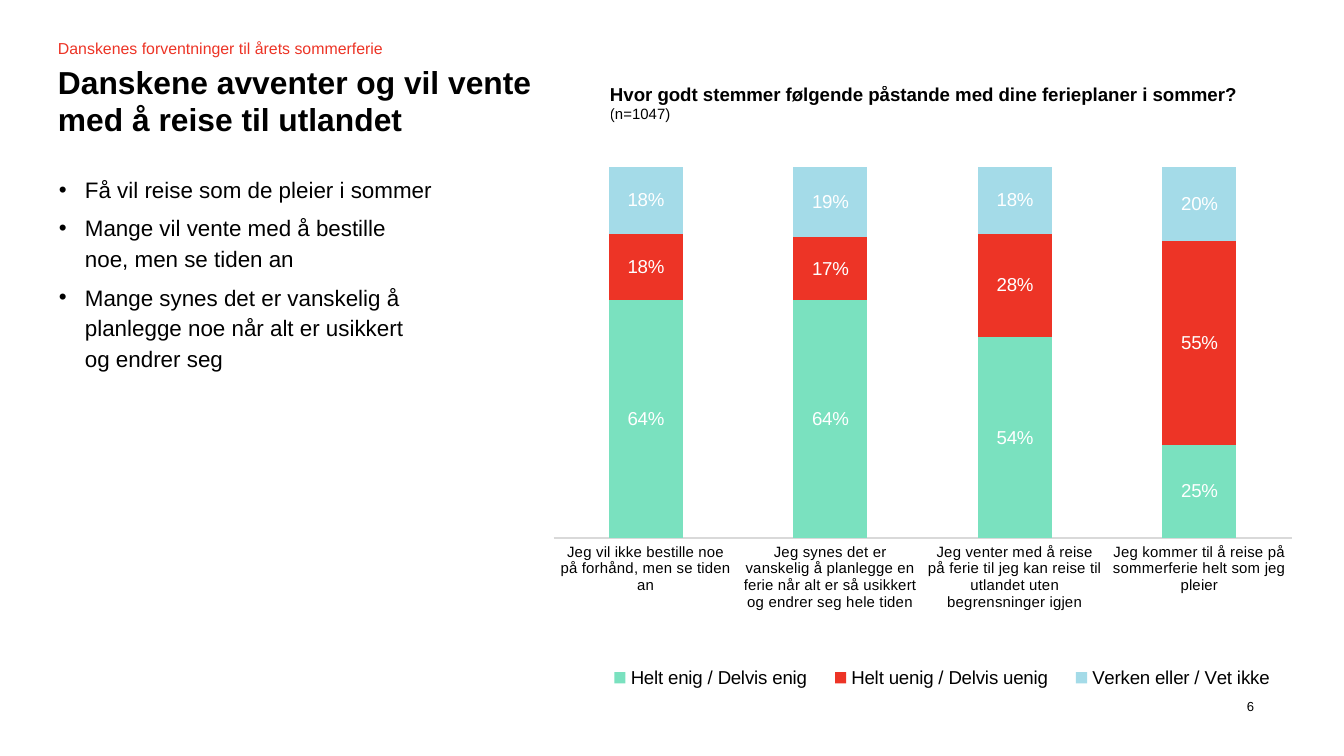
from dataclasses import dataclass
from typing import Any

from lxml import etree
from pptx import Presentation
from pptx import util as u
from pptx.chart import data as chart_data
from pptx.dml.color import RGBColor
from pptx.enum import chart as chart_enum
from pptx.oxml.ns import qn

SCALE = 914400 / 134.4
FONT = "Arial"
BLACK, WHITE, RED = "000000", "FFFFFF", "ED3426"
GREEN, BLUE, GREY = "7AE1BF", "A4DBE8", "D9D9D9"
PERCENT = "###0%"


@dataclass
class TextBlock:
    box: tuple[int, int, int, int]
    lines: list[str]
    size: float
    color: str = BLACK
    bold: bool = False
    wrap: bool = True
    bullet: bool = False
    spacing: float = 1.0
    gap: float = 0


@dataclass
class Answer:
    name: str
    values: list[float]
    color: str


TEXTS = [
    TextBlock((1247, 699, 38, 16), ["6"], 7),
    TextBlock((58, 39, 327, 19), ["Danskenes forventninger til årets sommerferie"],
              8.5, RED, wrap=False),
    TextBlock((58, 66, 508, 73),
              ["Danskene avventer og vil vente med å reise til utlandet"],
              17, bold=True, spacing=0.95),
    TextBlock((59, 172, 374, 191),
              ["Få vil reise som de pleier i sommer",
               "Mange vil vente med å bestille noe, men se tiden an",
               "Mange synes det er vanskelig å planlegge noe når alt er usikkert "
               "og endrer seg"],
              12, bullet=True, spacing=1.15, gap=2),
]
QUESTION = [
    ("Hvor godt stemmer følgende påstande med dine ferieplaner i sommer?", 10, True),
    ("(n=1047)", 8, False),
]
STATEMENTS = [
    "Jeg vil ikke bestille noe på forhånd, men se tiden an",
    "Jeg synes det er vanskelig å planlegge en ferie når alt er så usikkert "
    "og endrer seg hele tiden",
    "Jeg venter med å reise på ferie til jeg kan reise til utlandet uten "
    "begrensninger igjen",
    "Jeg kommer til å reise på sommerferie helt som jeg pleier",
]
ANSWERS = [
    Answer("Helt enig / Delvis enig", [0.64, 0.64, 0.54, 0.25], GREEN),
    Answer("Helt uenig / Delvis uenig", [0.18, 0.17, 0.28, 0.55], RED),
    Answer("Verken eller / Vet ikke", [0.18, 0.19, 0.18, 0.2], BLUE),
]


def px(value: int) -> int:
    return round(value * SCALE)


def rgb(color: str) -> RGBColor:
    return RGBColor.from_string(color)


def apply(target: Any, values: dict[str, Any]) -> None:
    for name, value in values.items():
        setattr(target, name, value)


def style(font: Any, size: float, color: str = BLACK, bold: bool = False) -> None:
    apply(font, {"name": FONT, "size": u.Pt(size), "bold": bold})
    font.color.rgb = rgb(color)


def add_bullet(paragraph: Any, indent: int) -> None:
    properties = paragraph._p.get_or_add_pPr()
    properties.set("marL", str(px(indent)))
    properties.set("indent", str(-px(indent)))
    etree.SubElement(properties, qn("a:buFont"), typeface=FONT)
    etree.SubElement(properties, qn("a:buChar"), char="•")


def add_text(slide: Any, block: TextBlock) -> None:
    frame = slide.shapes.add_textbox(*map(px, block.box)).text_frame
    apply(frame, {"margin_left": 0, "margin_right": 0, "margin_top": 0,
                  "margin_bottom": 0, "word_wrap": block.wrap})
    for index, line in enumerate(block.lines):
        paragraph = frame.add_paragraph() if index else frame.paragraphs[0]
        if block.bullet:
            add_bullet(paragraph, 26)
        apply(paragraph, {"line_spacing": block.spacing,
                          "space_before": u.Pt(block.gap if index else 0),
                          "space_after": u.Pt(block.gap)})
        run = paragraph.add_run()
        run.text = line
        style(run.font, block.size, block.color, block.bold)


def add_question(slide: Any) -> None:
    table = slide.shapes.add_table(1, 1, px(610), px(85), px(656), px(51)).table
    apply(table, {"first_row": False, "horz_banding": False})
    cell = table.cell(0, 0)
    apply(cell, {"margin_left": 0, "margin_right": 0, "margin_top": 0,
                 "margin_bottom": px(11)})
    properties = cell._tc.get_or_add_tcPr()
    for side in ("lnL", "lnR", "lnT", "lnB"):
        line = etree.SubElement(properties, qn(f"a:{side}"), w=str(u.Pt(1)))
        fill = etree.SubElement(line, qn("a:solidFill"))
        etree.SubElement(fill, qn("a:srgbClr"), val=WHITE)
    cell.fill.background()
    frame = cell.text_frame
    for index, (line, size, bold) in enumerate(QUESTION):
        paragraph = frame.add_paragraph() if index else frame.paragraphs[0]
        run = paragraph.add_run()
        run.text = line
        style(run.font, size, bold=bold)


def set_layout(parent: Any, inner: bool, place: dict[str, float]) -> None:
    layout = parent.find(qn("c:layout"))
    if layout is None:
        layout = etree.Element(qn("c:layout"))
        before = parent.find(qn("c:legendPos"))
        parent.insert(0 if before is None else parent.index(before) + 1, layout)
    manual = etree.SubElement(layout, qn("c:manualLayout"))
    if inner:
        etree.SubElement(manual, qn("c:layoutTarget"), val="inner")
    for name in ("xMode", "yMode"):
        etree.SubElement(manual, qn(f"c:{name}"), val="edge")
    for name, value in place.items():
        etree.SubElement(manual, qn(f"c:{name}"), val=str(value))


def add_answers(slide: Any) -> None:
    data = chart_data.CategoryChartData(number_format=PERCENT)
    data.categories = STATEMENTS
    for answer in ANSWERS:
        data.add_series(answer.name, answer.values)
    chart = slide.shapes.add_chart(
        chart_enum.XL_CHART_TYPE.COLUMN_STACKED_100,
        px(538), px(144), px(777), px(571), data).chart
    style(chart.font, 10)
    apply(chart, {"has_title": False, "has_legend": True})
    apply(chart.legend, {"position": chart_enum.XL_LEGEND_POSITION.BOTTOM,
                         "include_in_layout": False})
    style(chart.legend.font, 10)
    apply(chart.value_axis, {"visible": False, "has_major_gridlines": False,
                             "major_unit": 0.2})
    axis = chart.category_axis
    axis.major_tick_mark = chart_enum.XL_TICK_MARK.NONE
    style(axis.tick_labels.font, 8)
    axis.format.line.color.rgb = rgb(GREY)
    axis.format.line.width = u.Pt(0.75)
    plot = chart.plots[0]
    apply(plot, {"gap_width": 150, "overlap": 100, "vary_by_categories": False})
    for series, answer in zip(plot.series, ANSWERS):
        series.format.fill.solid()
        series.format.fill.fore_color.rgb = rgb(answer.color)
        labels = series.data_labels
        apply(labels, {"show_value": True, "number_format": PERCENT,
                       "number_format_is_linked": False})
        style(labels.font, 10, WHITE)
    set_layout(chart._chartSpace.chart.plotArea, True,
               {"x": 0.02, "y": 0.04, "w": 0.95, "h": 0.65})
    set_layout(chart.legend._element, False,
               {"x": 0.07, "y": 0.9, "w": 0.9, "h": 0.07})


def main() -> None:
    presentation = Presentation()
    apply(presentation, {"slide_width": px(1344), "slide_height": px(756)})
    slide = presentation.slides.add_slide(presentation.slide_layouts[6])
    for block in TEXTS:
        add_text(slide, block)
    add_question(slide)
    add_answers(slide)
    presentation.save("out.pptx")


if __name__ == "__main__":
    main()
